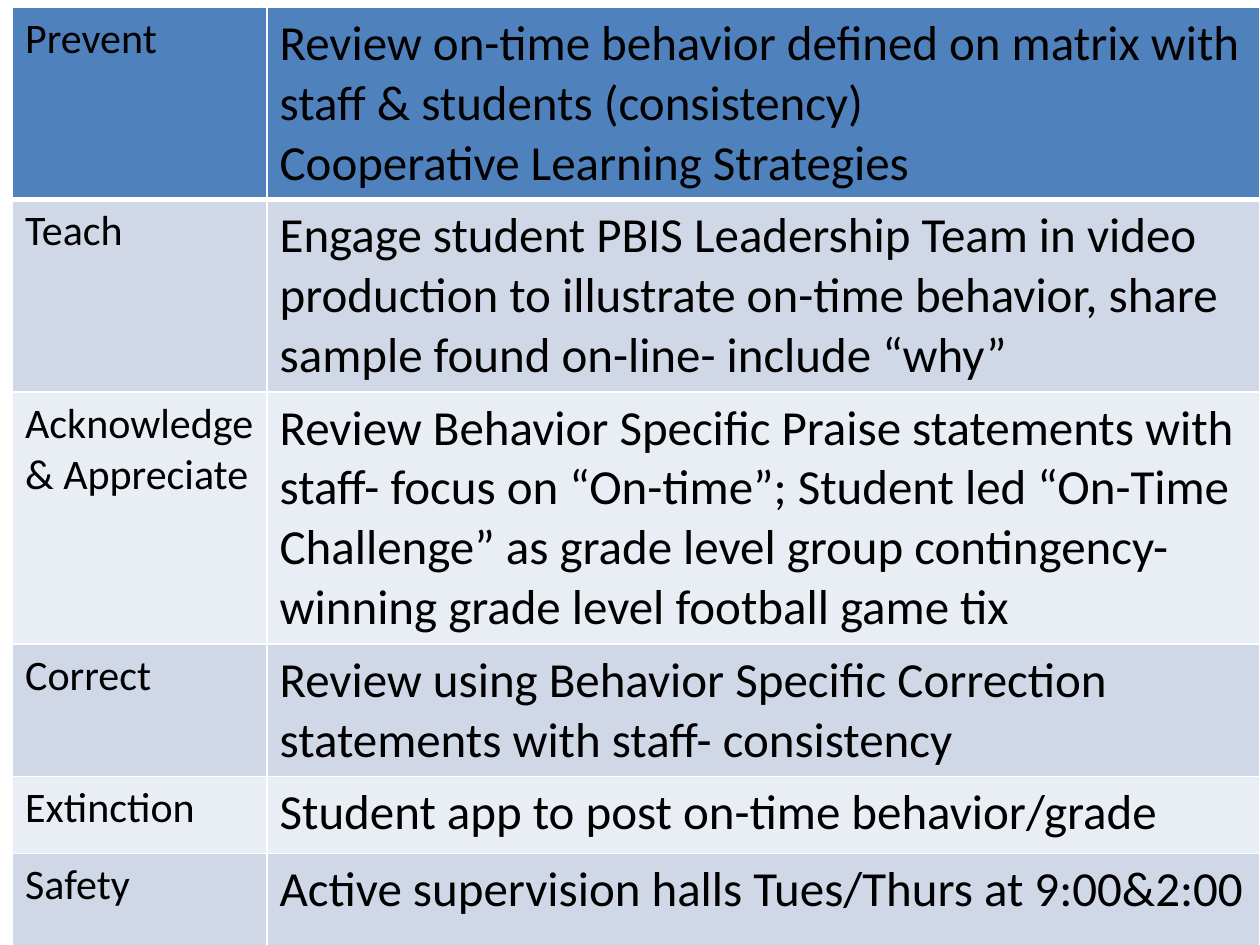
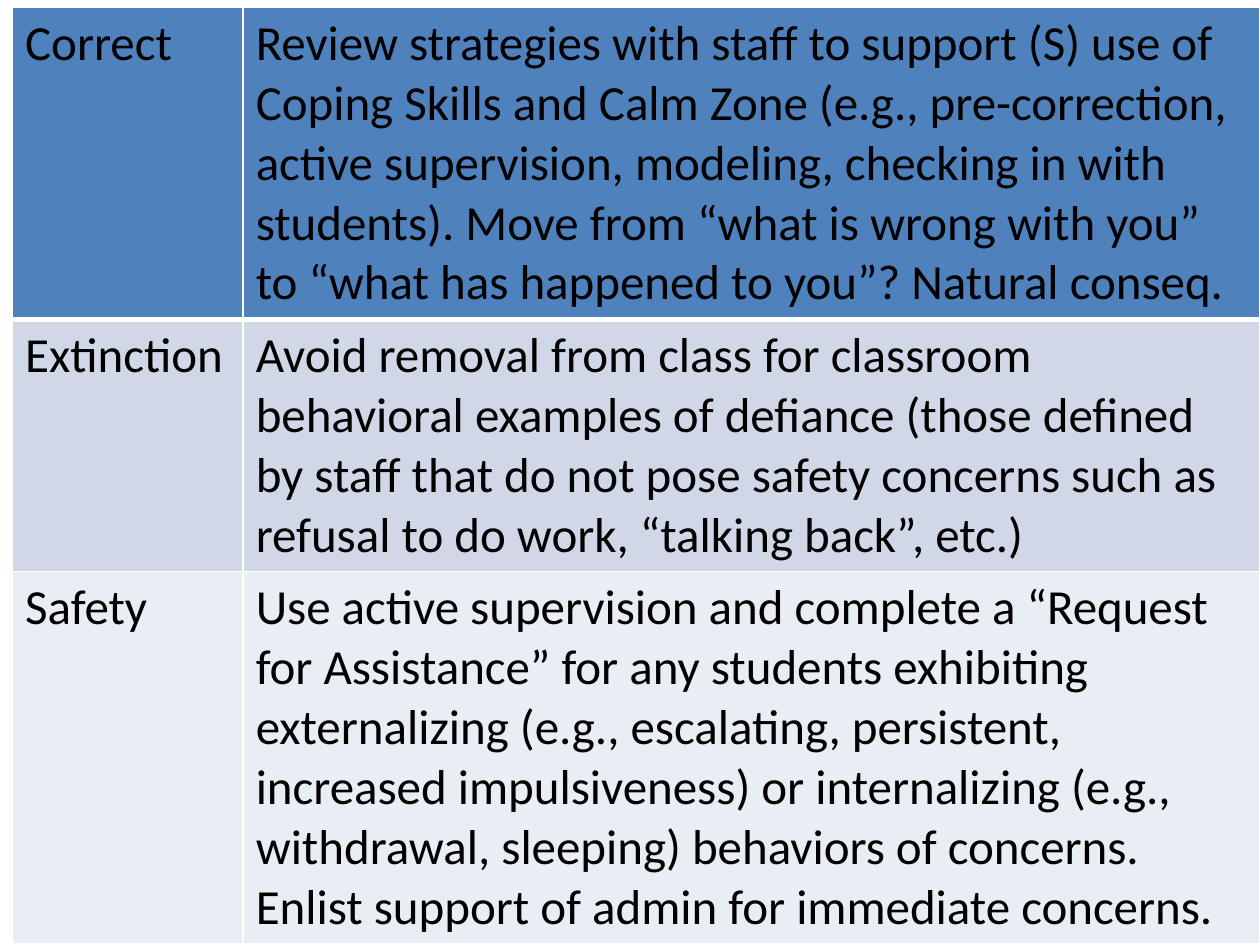
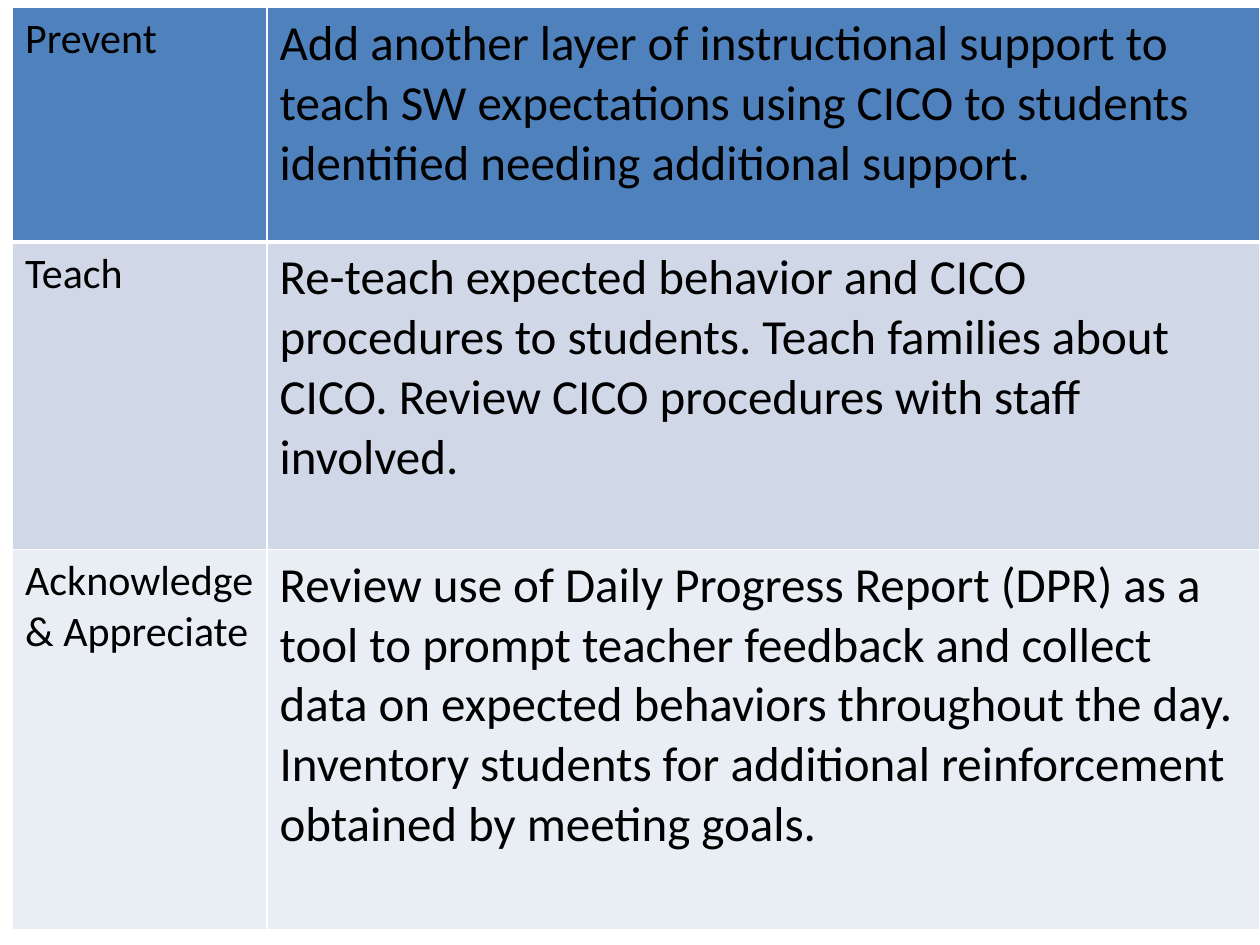
"""Builds three slides of behavior support plans, each one full-page table."""
from lxml import etree
from pptx import Presentation
from pptx.dml.color import RGBColor
from pptx.oxml.ns import qn
from pptx.util import Inches, Pt

COLORS = {"head": "4F81BD", "dark": "D0D8E8", "light": "E9EDF4",
          "text": "000000", "line": "FFFFFF"}
FONT = "Calibri"
LEFT, TOP, WIDTH = 0.1, 0.06, 9.9
BLANK = 6
THIN, THICK = 1, 3

PLANS = [
    {"label": 2.02, "size": 24, "rows": [
        (1.5, "Prevent",
         "Review on-time behavior defined on matrix with staff & students (consistency)\n"
         "Cooperative Learning Strategies"),
        (1.49, "Teach",
         "Engage student PBIS Leadership Team in video production to illustrate "
         "on-time behavior, share sample found on-line- include “why”"),
        (1.97, "Acknowledge\n& Appreciate",
         "Review Behavior Specific Praise statements with staff- focus on “On-time”; "
         "Student led “On-Time Challenge” as grade level group contingency- "
         "winning grade level football game tix"),
        (1.03, "Correct",
         "Review using Behavior Specific Correction statements with staff- consistency"),
        (0.61, "Extinction", "Student app to post on-time behavior/grade"),
        (0.83, "Safety", "Active supervision halls Tues/Thurs at 9:00&2:00"),
    ]},
    {"label": 1.83, "size": 28, "rows": [
        (2.43, "Correct",
         "Review strategies with staff to support (S) use of Coping Skills and Calm Zone "
         "(e.g., pre-correction, active supervision, modeling, checking in with students). "
         "Move from “what is wrong with you” to “what has happened to you”? "
         "Natural conseq."),
        (1.97, "Extinction",
         "Avoid removal from class for classroom behavioral examples of defiance "
         "(those defined by staff that do not pose safety concerns such as refusal to "
         "do work, “talking back”, etc.)"),
        (2.9, "Safety",
         "Use active supervision and complete a “Request for Assistance” for any students "
         "exhibiting externalizing (e.g., escalating, persistent, increased impulsiveness) "
         "or internalizing (e.g., withdrawal, sleeping) behaviors of concerns. "
         "Enlist support of admin for immediate concerns."),
    ]},
    {"label": 2.02, "size": 24, "rows": [
        (1.86, "Prevent",
         "Add another layer of instructional support to teach SW expectations using CICO "
         "to students identified needing additional support."),
        (2.44, "Teach",
         "Re-teach expected behavior and CICO procedures to students. Teach families "
         "about CICO. Review CICO procedures with staff involved."),
        (3.02, "Acknowledge\n& Appreciate",
         "Review use of Daily Progress Report (DPR) as a tool to prompt teacher feedback "
         "and collect data on expected behaviors throughout the day. Inventory students "
         "for additional reinforcement obtained by meeting goals."),
    ]},
]


def write(frame, text, size=28, color="text", bold=False):
    """Fill a text frame, one paragraph per line of text."""
    frame.text = text
    for para in frame.paragraphs:
        for run in para.runs:
            font = run.font
            font.name, font.size, font.bold = FONT, Pt(size), bold
            font.color.rgb = RGBColor.from_string(COLORS[color])


def edge(cell, side, width):
    """Draw one border of a cell; side is L, R, T or B."""
    props = cell._tc.get_or_add_tcPr()
    line = etree.SubElement(props, qn(f"a:ln{side}"), w=str(Pt(width)))
    fill = etree.SubElement(line, qn("a:solidFill"))
    etree.SubElement(fill, qn("a:srgbClr"), val=COLORS["line"])


def paint(cell, row):
    """Give a cell the borders and fill of its row."""
    top = THICK if row == 1 else THIN
    base = THICK if row == 0 else THIN
    for side, width in zip("LRTB", (THIN, THIN, top, base)):
        edge(cell, side, width)
    band = "head" if row == 0 else "dark" if row % 2 else "light"
    cell.fill.solid()
    cell.fill.fore_color.rgb = RGBColor.from_string(COLORS[band])


def add_plan(slide, label, size, rows):
    """Add a two-column plan table with labels on the left."""
    height = sum(row[0] for row in rows)
    table = slide.shapes.add_table(len(rows), 2, Inches(LEFT), Inches(TOP),
                                   Inches(WIDTH), Inches(height)).table
    table.columns[0].width = Inches(label)
    table.columns[1].width = Inches(WIDTH - label)
    for num, (tall, name, action) in enumerate(rows):
        table.rows[num].height = Inches(tall)
        for col, (text, points) in enumerate(((name, size), (action, 28))):
            cell = table.cell(num, col)
            paint(cell, num)
            write(cell.text_frame, text, size=points)


def main():
    """Build and save the deck."""
    deck = Presentation()
    deck.slide_width, deck.slide_height = Inches(10), Inches(7.5)
    for plan in PLANS:
        slide = deck.slides.add_slide(deck.slide_layouts[BLANK])
        add_plan(slide, **plan)
    deck.save("out.pptx")


if __name__ == "__main__":
    main()
